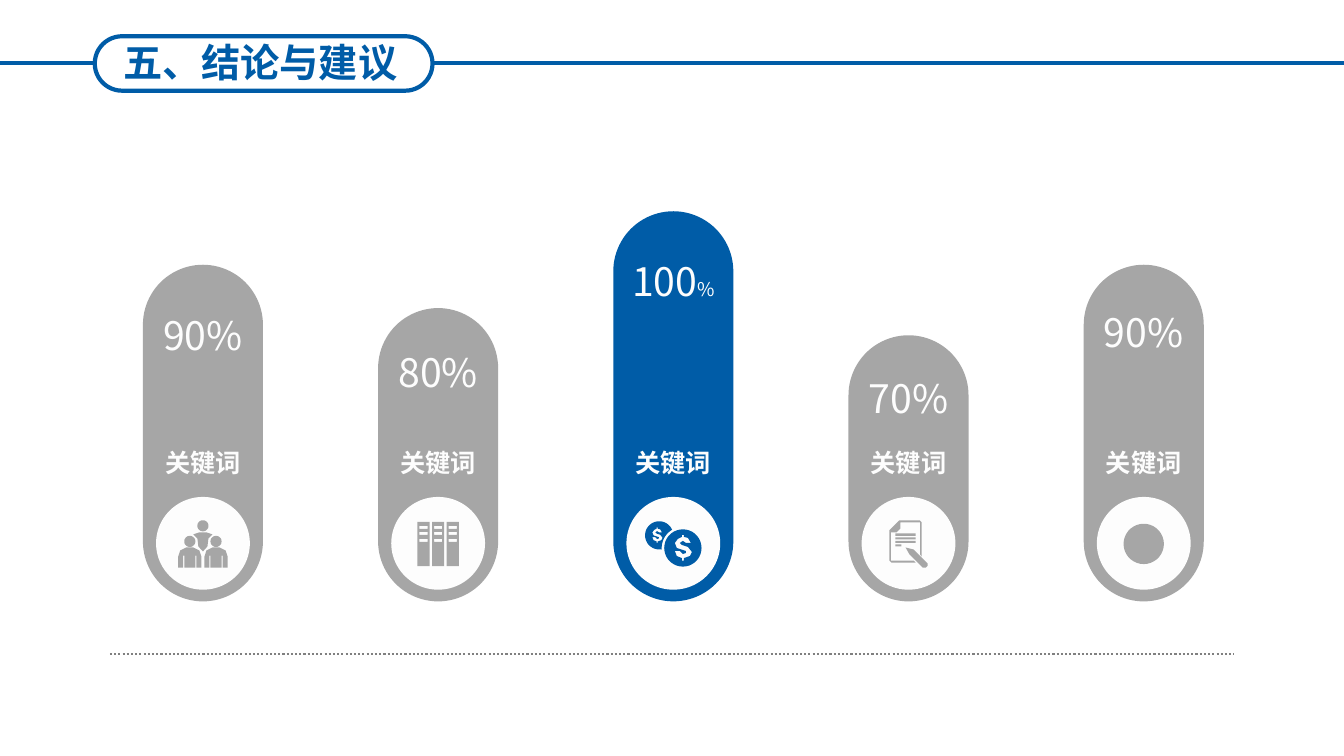
from dataclasses import dataclass
from math import cos, radians, sin

from lxml import etree
from pptx import Presentation
from pptx.dml.color import RGBColor
from pptx.enum.dml import MSO_LINE
from pptx.enum.shapes import MSO_CONNECTOR, MSO_SHAPE
from pptx.enum.text import MSO_ANCHOR, MSO_AUTO_SIZE, PP_ALIGN
from pptx.oxml.ns import qn
from pptx.util import Emu, Inches, Pt

PILL, OVAL = MSO_SHAPE.ROUNDED_RECTANGLE, MSO_SHAPE.OVAL
STRAIGHT, DOTTED = MSO_CONNECTOR.STRAIGHT, MSO_LINE.ROUND_DOT
CENTER, TOP = PP_ALIGN.CENTER, MSO_ANCHOR.TOP
GROW = MSO_AUTO_SIZE.SHAPE_TO_FIT_TEXT

Point = tuple[float, float]
Contour = list[Point]


@dataclass(frozen=True)
class Theme:
    blue: RGBColor = RGBColor(0x00, 0x5C, 0xA7)
    grey: RGBColor = RGBColor(0xA6, 0xA6, 0xA6)
    rule: RGBColor = RGBColor(0x80, 0x80, 0x80)
    white: RGBColor = RGBColor(0xFD, 0xFD, 0xFD)
    font: str = "Noto Sans CJK SC"
    large: float = 28
    keyword: float = 18
    small: float = 13.5


@dataclass(frozen=True)
class Box:
    """Left, top, width and height as percentages of the slide."""
    x: float
    y: float
    w: float
    h: float


@dataclass(frozen=True)
class Pillar:
    value: str
    height: float
    value_top: float
    color: RGBColor
    icon: list[Contour]
    unit_size: float


THEME = Theme()
prs = Presentation()
prs.slide_width, prs.slide_height = Inches(13.33), Inches(7.5)
s = prs.slides.add_slide(prs.slide_layouts[5])


def across(share: float) -> Emu:
    return Emu(round(prs.slide_width * share / 100))


def down(share: float) -> Emu:
    return Emu(round(prs.slide_height * share / 100))


def place(box: Box) -> tuple[Emu, Emu, Emu, Emu]:
    return across(box.x), down(box.y), across(box.w), down(box.h)


# Icon outlines, in hundredths of an inch
def rect(x: float, y: float, w: float, h: float) -> Contour:
    return [(x, y), (x + w, y), (x + w, y + h), (x, y + h)]


def arc(cx: float, cy: float, r: float, start: float = 0, end: float = 360) -> Contour:
    angles = [radians(start + (end - start) * i / 36) for i in range(37)]
    return [(cx + r * cos(a), cy + r * sin(a)) for a in angles]


def moved(points: Contour, dx: float, dy: float = 0, scale: float = 1) -> Contour:
    return [(x * scale + dx, y * scale + dy) for x, y in points]


SITTER = [(0, 47), (0, 36), (2, 30), (8, 27), (15, 27), (21, 30), (23, 36), (23, 47),
          (18, 47), (18, 35), (17, 35), (17, 47), (6, 47), (6, 35), (5, 35), (5, 47)]
LEADER = [(15, 14), (21, 12), (28, 12), (34, 14), (30, 18), (29, 26), (24.5, 31),
          (20, 26), (19, 18)]
PEOPLE = [arc(24.5, 5.5, 5.5), LEADER]
for shift in (0, 26):
    PEOPLE += [arc(11.5 + shift, 21, 5.5), moved(SITTER, shift)]

BINDERS = []
for left in (0, 14.5, 29):
    BINDERS += [rect(left, 0, 12, 44)] + [rect(left + 2, y, 8, 3) for y in (4, 10, 17)]

DOLLAR = [(-1, -13), (1, -13), (1, -11), (5, -10), (8, -5), (3, -5), (0, -7), (-3, -5),
          (-1, -3), (5, -1), (9, 4), (7, 8), (1, 10), (1, 12.5), (-1, 12.5), (-1, 10),
          (-6, 8), (-8, 3), (-3, 3), (0, 6), (3, 5), (3, 3), (0, 2), (-6, 0), (-8, -5),
          (-5, -9), (-1, -11)]
COINS = [arc(37.5, 26.5, 18.5), moved(DOLLAR, 37.5, 26.5),
         arc(14, 14, 14, 79.5, 336.5) + arc(37.5, 26.5, 21, 239.4, 176.6),
         moved(DOLLAR, 12, 14, 0.6)]

PAGE = [(10, 0), (30, 0), (32, 2), (32, 36), (30.5, 34), (30.5, 2), (11, 2), (11, 8),
        (7, 12), (1.5, 12), (1.5, 40), (24, 40), (26, 42), (2, 42), (0, 40), (0, 10)]
PENCIL = [(16, 27), (24, 29), (38, 43), (38, 45), (36, 47), (33, 47), (20, 34)]
DOCUMENT = [PAGE, PENCIL, rect(6, 13, 20, 2.5), rect(6, 17, 20, 2),
            rect(6, 20.5, 20, 2), rect(6, 24, 6, 2)]
PLAIN_OVAL = [moved(arc(0, 0, 20), 20, 20)]


# Drawing functions
def add_shape(kind: MSO_SHAPE, box: Box, fill: RGBColor | None, line: RGBColor | None = None) -> None:
    sp = s.shapes.add_shape(kind, *place(box))
    sp.shadow.inherit = False
    if kind == PILL:
        sp.adjustments[0] = 0.5
    if fill is None:
        sp.fill.background()
    else:
        sp.fill.solid()
        sp.fill.fore_color.rgb = fill
    if line is None:
        sp.line.fill.background()
    else:
        sp.line.color.rgb, sp.line.width = line, Pt(3)


def add_rule(x1: float, x2: float, y: float, color: RGBColor, width: float, dash: MSO_LINE | None = None) -> None:
    sp = s.shapes.add_connector(STRAIGHT, across(x1), down(y), across(x2), down(y))
    sp.line.color.rgb, sp.line.width = color, Pt(width)
    if dash is not None:
        sp.line.dash_style = dash
    etree.SubElement(sp._element.spPr, qn("a:effectLst"))


def write(sp, parts: list[tuple[str, float]], color: RGBColor, bold: bool = False) -> None:
    tf = sp.text_frame
    tf.word_wrap, tf.auto_size, tf.vertical_anchor = True, GROW, TOP
    p = tf.paragraphs[0]
    p.alignment = CENTER
    for text, size in parts:
        r = p.add_run()
        r.text = text
        r.font.name, r.font.size, r.font.bold = THEME.font, Pt(size), bold
        r.font.color.rgb = color
        ea = etree.SubElement(r._r.get_or_add_rPr(), qn("a:ea"))
        ea.set("typeface", THEME.font)


def add_text(box: Box, parts: list[tuple[str, float]], bold: bool = False) -> None:
    write(s.shapes.add_textbox(*place(box)), parts, THEME.white, bold)


def add_icon(contours: list[Contour], cx: float, cy: float, color: RGBColor) -> None:
    fine = [moved(c, 0, 0, 10) for c in contours]
    builder = s.shapes.build_freeform(*fine[0][0], scale=Inches(0.001))
    for i, points in enumerate(fine):
        if i:
            builder.move_to(*points[0])
        builder.add_line_segments(points[1:], close=True)
    sp = builder.convert_to_shape()
    sp.left, sp.top = across(cx) - sp.width // 2, down(cy) - sp.height // 2
    sp.shadow.inherit = False
    sp.fill.solid()
    sp.fill.fore_color.rgb = color
    sp.line.fill.background()


def add_pillar(pillar: Pillar, cx: float) -> None:
    def centred(y: float, w: float, h: float) -> Box:
        return Box(cx - w / 2, y, w, h)

    add_shape(PILL, centred(79.55 - pillar.height, 8.93, pillar.height), pillar.color)
    add_text(centred(pillar.value_top, 9.83, 7.6),
             [(pillar.value, THEME.large), ("%", pillar.unit_size)])
    add_shape(OVAL, centred(65.73, 6.98, 12.27), THEME.white)
    add_text(centred(58.53, 7.58, 5.33), [("关键词", THEME.keyword)], bold=True)
    add_icon(pillar.icon, cx, 71.95, pillar.color)


# Title in its outlined pill, with a rule on each side
title = s.shapes.title
title.left, title.top, title.width, title.height = place(Box(6.68, 4.4, 25.35, 7.6))
write(title, [("五、结论与建议", THEME.large)], THEME.blue, bold=True)
add_shape(PILL, Box(7.05, 4.8, 25.13, 7.2), None, THEME.blue)
for start, end in ((0, 7.05), (32.18, 100)):
    add_rule(start, end, 8.3, THEME.blue, 3)

# Five pillars at an equal pitch above a dotted base line
add_rule(8.18, 91.82, 86.53, THEME.rule, 1.5, DOTTED)
PILLARS = [
    Pillar("90", 44.53, 40.53, THEME.grey, PEOPLE, THEME.large),
    Pillar("80", 38.8, 45.47, THEME.grey, BINDERS, THEME.large),
    Pillar("100", 51.6, 33.33, THEME.blue, COINS, THEME.small),
    Pillar("70", 35.2, 48.8, THEME.grey, DOCUMENT, THEME.large),
    Pillar("90", 44.53, 40.13, THEME.grey, PLAIN_OVAL, THEME.large),
]
for column, pillar in enumerate(PILLARS):
    add_pillar(pillar, 15.1 + 17.5 * column)

prs.save("out.pptx")
